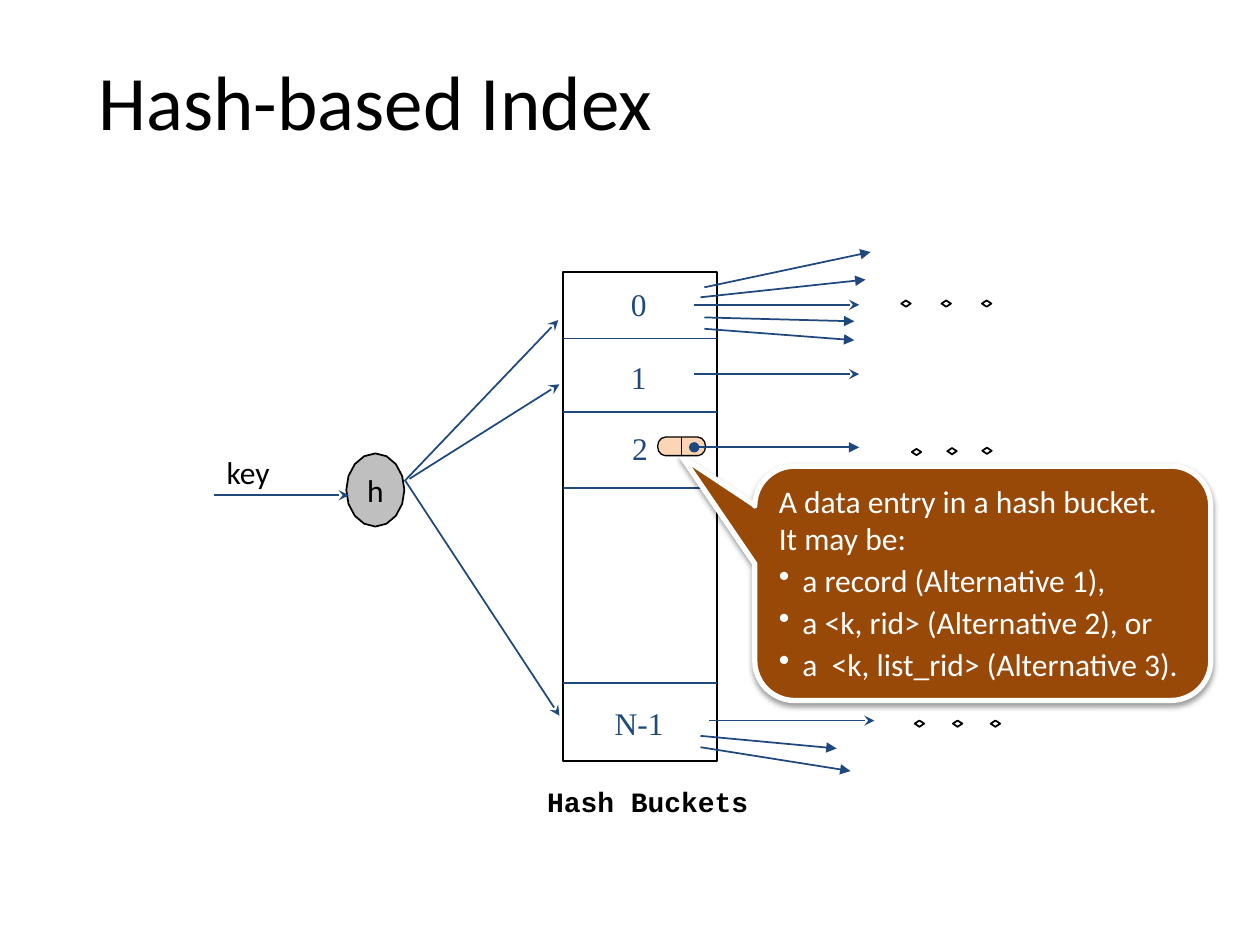
import math

from lxml import etree
from pptx import Presentation
from pptx.dml.color import RGBColor
from pptx.enum import shapes, text
from pptx.oxml import ns
from pptx.util import Pt

NAVY, BLACK, WHITE = "1F497D", "000000", "FFFFFF"
rgb = RGBColor.from_string

deck = Presentation()
deck.slide_width, deck.slide_height = Pt(720), Pt(540)
slide = deck.slides.add_slide(deck.slide_layouts[6])


def label(words, left, top, width, height, font, size, colour, align="LEFT", wrap=False):
    frame = slide.shapes.add_textbox(Pt(left), Pt(top), Pt(width), Pt(height)).text_frame
    frame.word_wrap = wrap
    frame.text = words
    line = frame.paragraphs[0]
    line.alignment = text.PP_ALIGN[align]
    line.font.name, line.font.size = font, Pt(size)
    line.font.color.rgb = rgb(colour)
    return frame


def connect(x1, y1, x2, y2, tail=None, head=None, colour=NAVY):
    link = slide.shapes.add_connector(
        shapes.MSO_CONNECTOR.STRAIGHT, Pt(x1), Pt(y1), Pt(x2), Pt(y2))
    link.line.color.rgb = rgb(colour)
    link.line.width = Pt(1)
    for tag, kind in (("a:headEnd", head), ("a:tailEnd", tail)):
        if kind:
            etree.SubElement(link.get_or_add_ln(), ns.qn(tag), type=kind)
    etree.SubElement(link._element.spPr, ns.qn("a:effectLst"))


title = label("Hash-based Index", 44.6, 20.9, 340, 72, "Calibri", 44, BLACK, "CENTER", True)
title.vertical_anchor = text.MSO_ANCHOR.MIDDLE

angles = [math.pi * step / 8 for step in range(16)]
hash_node = [(214.5 + 16.6 * math.cos(a), 280 + 20.9 * math.sin(a)) for a in angles]
bucket_array = [(321.8, 434.9), (321.8, 155.5), (409.7, 155.5), (409.7, 434.9)]
dots = [
    (517.7, 173.5), (540.7, 173.5), (563.8, 173.5),
    (523.7, 258.3), (544, 257.8), (564, 257.6),
    (525.4, 413.5), (547.2, 413.5), (568.8, 413.5),
]
diamonds = [[(x + 2.7, y), (x, y - 1.8), (x - 2.7, y), (x, y + 1.8)] for x, y in dots]
for corners in [hash_node, bucket_array] + diamonds:
    corners = [(Pt(x), Pt(y)) for x, y in corners]
    builder = slide.shapes.build_freeform(*corners[0])
    builder.add_line_segments(corners[1:], close=True)
    outline = builder.convert_to_shape()
    outline.shadow.inherit = False
    outline.fill.background()
    outline.line.color.rgb = rgb(BLACK)
    outline.line.width = Pt(1)
    if len(corners) == len(hash_node):
        outline.fill.solid()
        outline.fill.fore_color.rgb = rgb("BFBFBF")
        frame = outline.text_frame
        frame.margin_left = frame.margin_right = 0
        frame.vertical_anchor = text.MSO_ANCHOR.MIDDLE
        frame.text = "h"
        letter = frame.paragraphs[0]
        letter.alignment = text.PP_ALIGN.CENTER
        letter.font.name, letter.font.size = "Calibri", Pt(18)
        letter.font.color.rgb = rgb(BLACK)

label("key", 122.4, 255.6, 38.9, 28.8, "Calibri", 18, BLACK)
caption = label("Hash Buckets", 304.6, 445, 131, 26.6, "Courier New", 16, BLACK, "CENTER")
caption.paragraphs[0].font.bold = True
for number, left, top, width, height in [
    ("0", 353.5, 159.1, 33.1, 43.2),
    ("1", 353.5, 200.9, 23.8, 28.8),
    ("2", 354.2, 241.9, 23.8, 28.8),
    ("N-1", 344.2, 398.9, 60.5, 43.2),
]:
    label(number, left, top, width, height, "Times New Roman", 18, NAVY)

for ends in [
    (234, 273.6, 319.7, 219.6), (231.1, 275, 319, 182.9),
    (122.4, 283, 199.4, 283), (231.8, 275, 319.7, 409),
    (396.7, 174.2, 491, 174.2), (396.7, 213.8, 491, 213.8),
    (405.4, 411.8, 499.7, 411.8),
]:
    connect(*ends, tail="stealth")
for y in (193.5, 235.4, 278.7, 390.2):
    connect(321.8, y, 409.7, y)

callout = slide.shapes.add_shape(
    shapes.MSO_SHAPE.ROUNDED_RECTANGULAR_CALLOUT, Pt(431.3), Pt(266.4), Pt(260.6), Pt(133.9))
for index, ratio in enumerate((-0.66, -0.54, 0.17)):
    callout.adjustments[index] = ratio
callout.fill.solid()
callout.fill.fore_color.rgb = rgb("984807")
callout.line.color.rgb = rgb(WHITE)
callout.line.width = Pt(3)
callout.shadow.inherit = False
glow = etree.SubElement(
    callout._element.spPr.find(ns.qn("a:effectLst")), ns.qn("a:outerShdw"),
    blurRad=str(Pt(3.1)), dist=str(Pt(1.6)), dir="5400000", rotWithShape="0")
shade = etree.SubElement(glow, ns.qn("a:srgbClr"), val=BLACK)
etree.SubElement(shade, ns.qn("a:alpha"), val="38000")
frame = callout.text_frame
frame.word_wrap = True
frame.vertical_anchor = text.MSO_ANCHOR.MIDDLE
frame.text = "\n".join([
    "A data entry in a hash bucket.  It may be:",
    "a record (Alternative 1),",
    "a <k, rid> (Alternative 2), or",
    "a  <k, list_rid> (Alternative 3).",
])
for index, entry in enumerate(frame.paragraphs):
    entry.alignment = text.PP_ALIGN.LEFT
    entry.line_spacing = Pt(24 if index else 21)
    entry.font.name, entry.font.size = "Calibri", Pt(18)
    entry.font.color.rgb = rgb(WHITE)
    if index:
        props = entry._p.get_or_add_pPr()
        props.set("marL", str(Pt(13.5)))
        props.set("indent", str(Pt(-13.5)))
        bullet = etree.Element(ns.qn("a:buChar"), char="•")
        props.find(ns.qn("a:defRPr")).addprevious(bullet)

for ends in [
    (400.3, 169.9, 494.6, 159.8), (402.5, 164.2, 497.5, 144),
    (402.5, 181.4, 488.2, 183.6), (402.5, 187.9, 488.2, 194.4),
    (400.3, 420.5, 478.1, 427.7), (400.3, 427, 486, 440.6),
]:
    connect(*ends, tail="triangle")

data_entry = slide.shapes.add_shape(
    shapes.MSO_SHAPE.FLOWCHART_TERMINATOR, Pt(375.8), Pt(249.8), Pt(27.4), Pt(10.6))
data_entry.shadow.inherit = False
data_entry.fill.solid()
data_entry.fill.fore_color.rgb = rgb("FCD5B5")
data_entry.line.color.rgb = rgb(BLACK)
data_entry.line.width = Pt(0.75)
connect(389.5, 249.8, 389.5, 260.4, colour=BLACK)
connect(396.7, 255.6, 491, 255.6, tail="triangle", head="oval")

deck.save("out.pptx")
